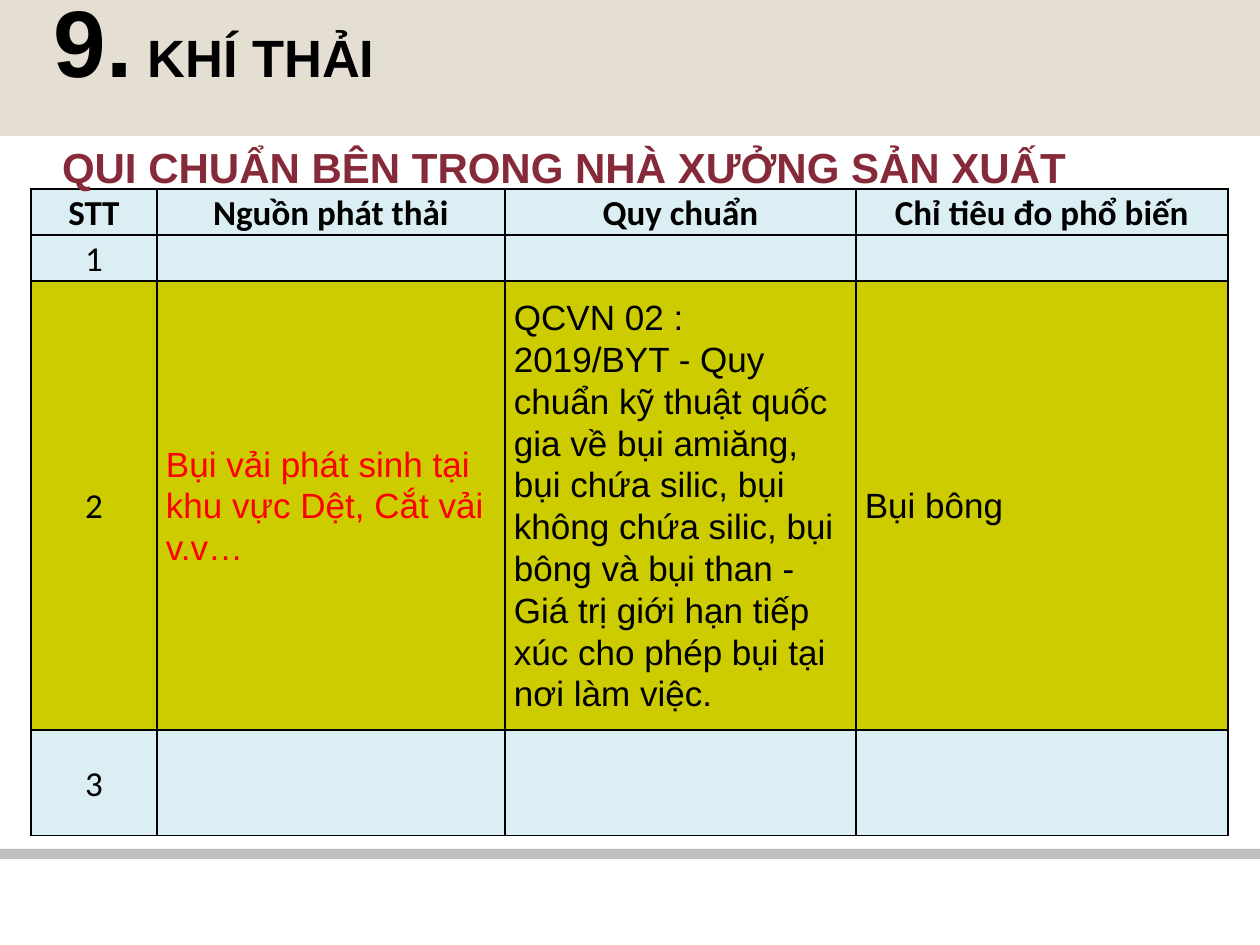
import pptx
import pptx.util
import pptx.oxml
from lxml import etree
from pptx.dml.color import RGBColor
from pptx.enum.shapes import MSO_SHAPE
from pptx.enum.text import MSO_ANCHOR, MSO_AUTO_SIZE, PP_ALIGN
from pptx.oxml.ns import qn

PX = 914400 // 126
WIDTH, HEIGHT = 1260, 945

BLACK = RGBColor(0x00, 0x00, 0x00)
RED = RGBColor(0xFF, 0x00, 0x00)
MAROON = RGBColor(0x86, 0x2A, 0x39)
SAND = RGBColor(0xE4, 0xDF, 0xD2)
GREY = RGBColor(0xBF, 0xBF, 0xBF)
PALE_BLUE = RGBColor(0xDB, 0xEE, 0xF4)
OLIVE = RGBColor(0xCC, 0xCC, 0x00)

COLUMN_WIDTHS = [126, 348, 351, 372]
ROW_HEIGHTS = [45, 45, 449, 106]
HIGHLIGHT_ROW = 2
ROWS = [
    ["STT", "Nguồn phát thải", "Quy chuẩn", "Chỉ tiêu đo phổ biến"],
    ["1", "", "", ""],
    ["2", "Bụi vải phát sinh tại khu vực Dệt, Cắt vải v.v…",
     "QCVN 02 : 2019/BYT - Quy chuẩn kỹ thuật quốc gia về bụi amiăng, "
     "bụi chứa silic, bụi không chứa silic, bụi bông và bụi than - "
     "Giá trị giới hạn tiếp xúc cho phép bụi tại nơi làm việc.",
     "Bụi bông"],
    ["3", "", "", ""],
]


def px(length):
    return pptx.util.Emu(length * PX)


def box_emu(box):
    return [px(length) for length in box]


def set_margins(target, left=0, top=0, right=0, bottom=0):
    target.margin_left, target.margin_top = px(left), px(top)
    target.margin_right, target.margin_bottom = px(right), px(bottom)


def set_font(font, name, size, color, bold=False):
    font.name, font.size, font.bold = name, pptx.util.Pt(size), bold
    font.color.rgb = color


def add_bar(slide, box, color):
    bar = slide.shapes.add_shape(MSO_SHAPE.RECTANGLE, *box_emu(box))
    bar.shadow.inherit = False
    bar.fill.solid()
    bar.fill.fore_color.rgb = color
    bar.line.fill.background()


def add_borders(cell):
    properties = cell._tc.get_or_add_tcPr()
    for position, side in enumerate(("lnL", "lnR", "lnT", "lnB")):
        line = etree.Element(qn("a:" + side), w=str(pptx.util.Pt(1)))
        fill = etree.SubElement(line, qn("a:solidFill"))
        etree.SubElement(fill, qn("a:srgbClr"), val=str(BLACK))
        properties.insert(position, line)


def fill_cell(cell, text, row, column):
    cell.fill.solid()
    cell.fill.fore_color.rgb = OLIVE if row == HIGHLIGHT_ROW else PALE_BLUE
    add_borders(cell)
    cell.vertical_anchor = MSO_ANCHOR.MIDDLE
    set_margins(cell, left=9, right=9)
    cell.text = text
    paragraph = cell.text_frame.paragraphs[0]
    if not text:
        paragraph.font.size = pptx.util.Pt(18)
        return
    centred = row == 0 or column == 0
    paragraph.alignment = PP_ALIGN.CENTER if centred else PP_ALIGN.LEFT
    paragraph.line_spacing = 1.07
    set_font(paragraph.font, "Calibri" if centred else "Arial", 20,
             RED if column == 1 and row > 0 else BLACK, bold=row == 0)


def add_standards_table(slide, left, top):
    box = (left, top, sum(COLUMN_WIDTHS), sum(ROW_HEIGHTS))
    table = slide.shapes.add_table(
        len(ROWS), len(COLUMN_WIDTHS), *box_emu(box)).table
    for column, width in zip(table.columns, COLUMN_WIDTHS):
        column.width = px(width)
    for row, height in zip(table.rows, ROW_HEIGHTS):
        row.height = px(height)
    for row, texts in enumerate(ROWS):
        for column, text in enumerate(texts):
            fill_cell(table.cell(row, column), text, row, column)


def add_subtitle(slide, box):
    frame = slide.shapes.add_textbox(*box_emu(box)).text_frame
    frame.word_wrap = False
    set_margins(frame, left=13, top=8)
    paragraph = frame.paragraphs[0]
    paragraph.text = "QUI CHUẨN BÊN TRONG NHÀ XƯỞNG SẢN XUẤT"
    set_font(paragraph.font, "Arial", 24, MAROON, bold=True)


def place_title(slide, box):
    title = slide.shapes.title
    # Bring the title in front of the header band
    title.element.getparent().append(title.element)
    title.left, title.top, title.width, title.height = box_emu(box)
    frame = title.text_frame
    frame.auto_size = MSO_AUTO_SIZE.NONE
    frame.vertical_anchor = MSO_ANCHOR.TOP
    set_margins(frame, left=1)
    paragraph = frame.paragraphs[0]
    paragraph.alignment = PP_ALIGN.LEFT
    paragraph.line_spacing = pptx.util.Pt(32.7)
    for text, size in (("9.", 54), (" KHÍ THẢI", 30)):
        run = paragraph.add_run()
        run.text = text
        set_font(run.font, "Arial", size, BLACK, bold=True)


def main():
    presentation = pptx.Presentation()
    presentation.slide_width, presentation.slide_height = px(WIDTH), px(HEIGHT)
    slide = presentation.slides.add_slide(presentation.slide_layouts[5])

    # Footer rule and header band
    add_bar(slide, (0, 849, WIDTH, 10), GREY)
    add_bar(slide, (0, 0, WIDTH, 136), SAND)

    # Table, subtitle and title
    add_standards_table(slide, 31, 189)
    add_subtitle(slide, (49, 134, 1040, 102))
    place_title(slide, (53, 39, 819, 58))

    presentation.save("out.pptx")


if __name__ == "__main__":
    main()
